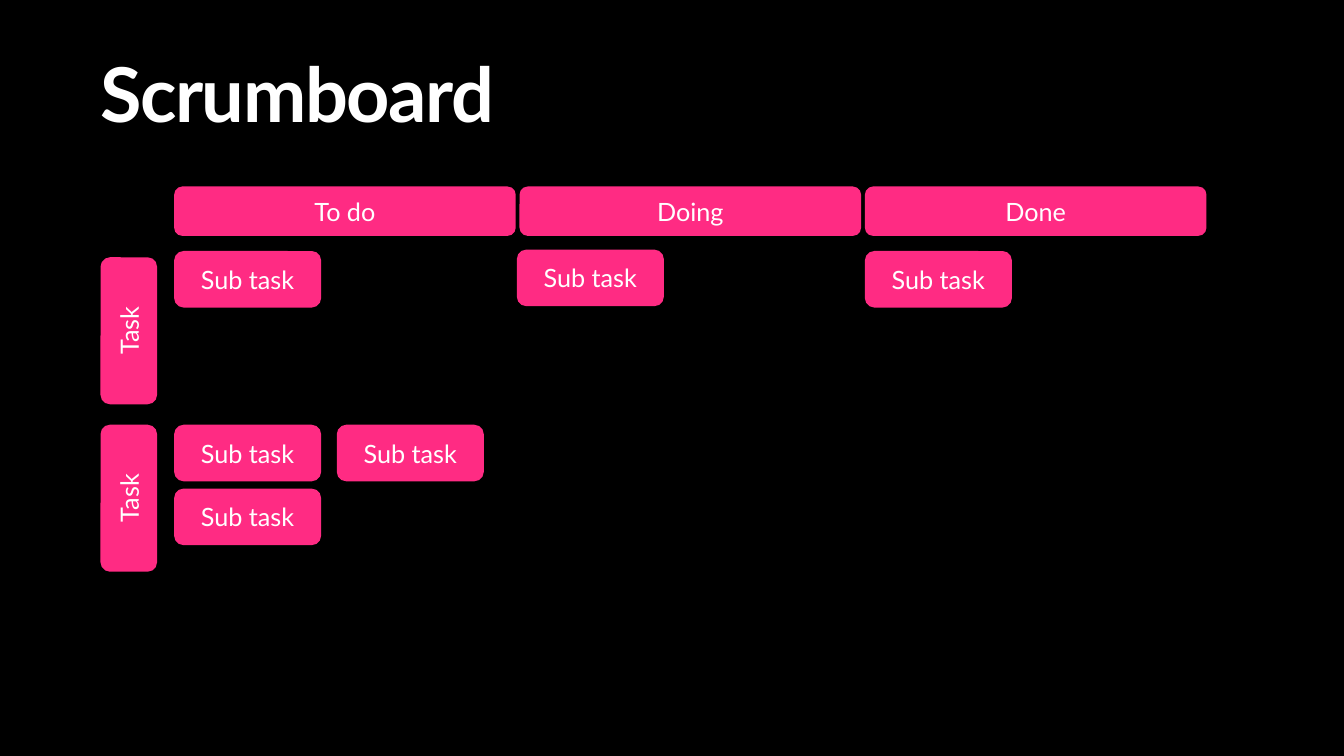
"""Build a Scrumboard slide with status columns, tasks and sub tasks."""
from pptx import Presentation
from pptx.dml.color import RGBColor
from pptx.enum.shapes import MSO_SHAPE
from pptx.enum.text import MSO_ANCHOR, PP_ALIGN
from pptx.util import Pt

BLACK = RGBColor(0x00, 0x00, 0x00)
WHITE = RGBColor(0xFF, 0xFF, 0xFF)
PINK = RGBColor(0xFF, 0x2B, 0x83)

TITLE_FONT = {"name": "Lato", "size": Pt(54), "bold": True}
CARD_FONT = {"name": "Lato", "size": Pt(18)}
TITLE_FRAME = {"margin_left": 0, "margin_top": 0, "margin_right": 0,
               "margin_bottom": 0, "word_wrap": True}
CARD_FRAME = {"vertical_anchor": MSO_ANCHOR.MIDDLE, "word_wrap": True}

STATUSES = ["To do", "Doing", "Done"]
BOARD_LEFT, STATUS_PITCH = 124.4, 246.7
TASK_TOPS = [183.8, 303.4]
SUB_TASKS = [(124.4, 179.3), (369.2, 178.3), (617.8, 179.3),
             (124.4, 303.4), (240.6, 303.4), (124.4, 349)]


def set_format(target, values):
    """Set each attribute of the target from a dict."""
    for name, value in values.items():
        setattr(target, name, value)


def add_text(text_frame, text, frame_format, font_format):
    """Write one white line into a text frame and return its run."""
    set_format(text_frame, frame_format)
    run = text_frame.paragraphs[0].add_run()
    run.text = text
    set_format(run.font, font_format)
    run.font.color.rgb = WHITE
    return run


def add_title(slide, text):
    """Add the large slide title with tight spacing."""
    shape = slide.shapes.add_textbox(Pt(71.5), Pt(41), Pt(765.4), Pt(67.7))
    run = add_text(shape.text_frame, text, TITLE_FRAME, TITLE_FONT)
    run._r.get_or_add_rPr().set("spc", "-100")
    shape.text_frame.paragraphs[0].line_spacing = 0.9


def add_card(slide, text, left, top, width, height, upright=False):
    """Add a pink rounded card, with text reading upwards if upright."""
    shape = slide.shapes.add_shape(MSO_SHAPE.ROUNDED_RECTANGLE,
                                   Pt(left), Pt(top), Pt(width), Pt(height))
    shape.shadow.inherit = False
    shape.fill.solid()
    shape.fill.fore_color.rgb = PINK
    shape.line.fill.background()
    add_text(shape.text_frame, text, CARD_FRAME, CARD_FONT)
    shape.text_frame.paragraphs[0].alignment = PP_ALIGN.CENTER
    if upright:
        shape.text_frame._txBody.bodyPr.set("vert", "vert270")


def main():
    """Create the slide and save the presentation."""
    presentation = Presentation()
    presentation.slide_width, presentation.slide_height = Pt(960), Pt(540)
    slide = presentation.slides.add_slide(presentation.slide_layouts[6])
    slide.background.fill.solid()
    slide.background.fill.fore_color.rgb = BLACK

    add_title(slide, "Scrumboard")
    for column, status in enumerate(STATUSES):
        add_card(slide, status, BOARD_LEFT + column * STATUS_PITCH, 133.2, 244, 35.3)
    for top in TASK_TOPS:
        add_card(slide, "Task", 71.8, top, 40.4, 105, upright=True)
    for left, top in SUB_TASKS:
        add_card(slide, "Sub task", left, top, 105, 40.4)

    presentation.save("out.pptx")


if __name__ == "__main__":
    main()
